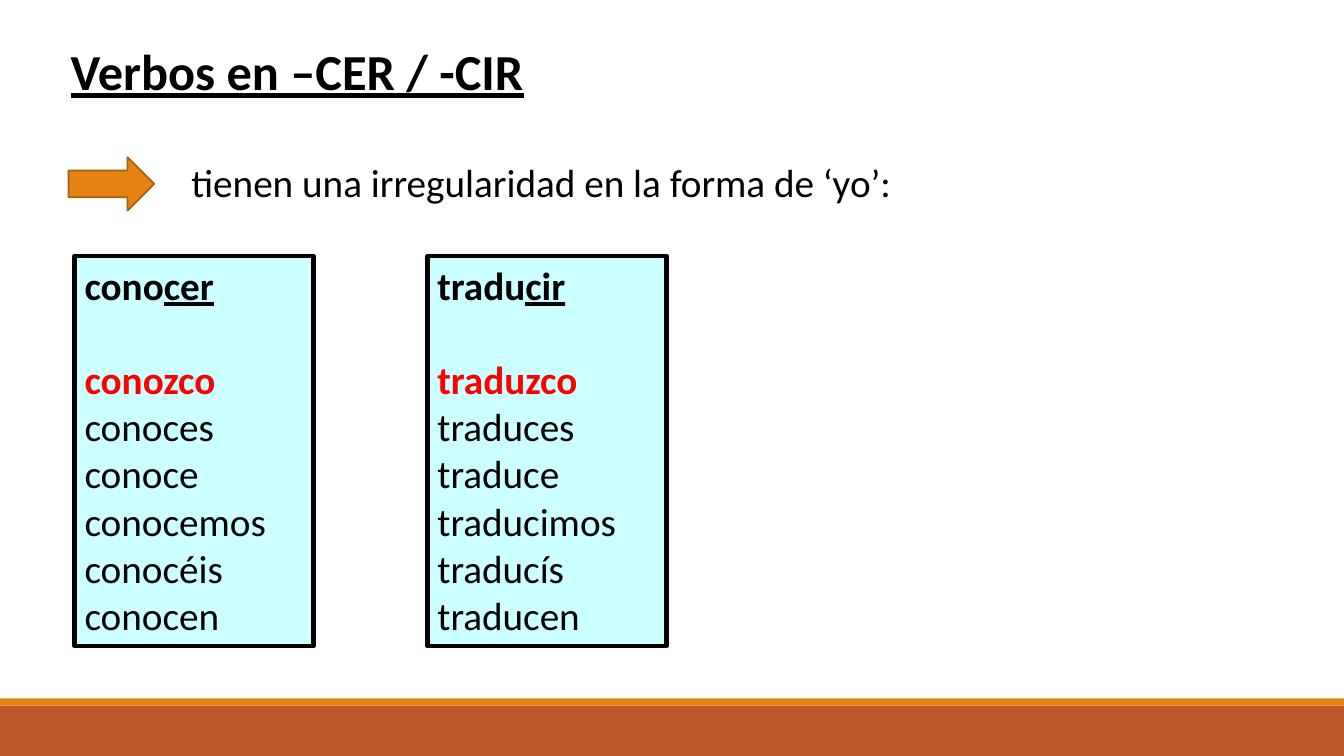
from dataclasses import dataclass

from pptx import Presentation
from pptx import util as u
from pptx.dml.color import RGBColor
from pptx.enum import shapes, text


@dataclass(frozen=True)
class Theme:
    font: str = "Calibri"
    title_size: int = 36
    body_size: int = 28
    heading_gap: int = 34
    ink: str = "000000"
    highlight: str = "FF0000"
    card: str = "CCFFFF"
    orange: str = "E48312"
    orange_edge: str = "A9610D"
    rust: str = "BD582C"


@dataclass(frozen=True)
class Area:
    left: float
    top: float
    width: float
    height: float

    def lengths(self) -> tuple:
        return tuple(u.Inches(side) for side in
                     (self.left, self.top, self.width, self.height))


@dataclass(frozen=True)
class Verb:
    stem: str
    ending: str
    irregular: str
    regular: tuple[str, ...]


THEME = Theme()
VERBS = (
    Verb("cono", "cer", "conozco",
         ("conoces", "conoce", "conocemos", "conocéis", "conocen")),
    Verb("tradu", "cir", "traduzco",
         ("traduces", "traduce", "traducimos", "traducís", "traducen")),
)
CARD_LEFT, CARD_STEP = 0.74, 3.5


def style_span(span, size: int = THEME.body_size, color: str = THEME.ink,
               bold: bool = False, underline: bool = False) -> None:
    span.font.name = THEME.font
    span.font.size = u.Pt(size)
    span.font.color.rgb = RGBColor.from_string(color)
    span.font.bold = bold
    span.font.underline = underline


def set_frame(frame) -> None:
    frame.word_wrap = True
    frame.auto_size = text.MSO_AUTO_SIZE.SHAPE_TO_FIT_TEXT
    frame.vertical_anchor = text.MSO_ANCHOR.TOP


def add_block(page, kind, area: Area, fill: str, edge: str = "", weight: float = 0):
    block = page.shapes.add_shape(kind, *area.lengths())
    block.shadow.inherit = False
    block.fill.solid()
    block.fill.fore_color.rgb = RGBColor.from_string(fill)
    if edge:
        block.line.color.rgb = RGBColor.from_string(edge)
        block.line.width = u.Pt(weight)
    else:
        block.line.fill.background()
    return block


def add_verb_card(page, verb: Verb, area: Area) -> None:
    card = add_block(page, shapes.MSO_SHAPE.RECTANGLE, area, THEME.card, THEME.ink, 3)
    frame = card.text_frame
    frame.text = "\n".join(("", verb.irregular, *verb.regular))
    set_frame(frame)
    heading, irregular, *regular = frame.paragraphs
    for para in frame.paragraphs:
        para.alignment = text.PP_ALIGN.LEFT
    # Infinitive with its ending underlined
    heading.space_after = u.Pt(THEME.heading_gap)
    for part, underline in ((verb.stem, False), (verb.ending, True)):
        span = heading.add_run()
        span.text = part
        style_span(span, bold=True, underline=underline)
    # Conjugated forms
    style_span(irregular.runs[0], color=THEME.highlight, bold=True)
    for para in regular:
        style_span(para.runs[0])


def main() -> None:
    deck = Presentation()
    deck.slide_width, deck.slide_height = u.Inches(13.33), u.Inches(7.5)
    page = deck.slides.add_slide(deck.slide_layouts[5])

    # Footer bands
    rectangle = shapes.MSO_SHAPE.RECTANGLE
    add_block(page, rectangle, Area(0, 7, 13.33, 0.5), THEME.rust)
    add_block(page, rectangle, Area(0, 6.93, 13.33, 0.07), THEME.orange)

    # Title
    title = page.shapes.title
    title.left, title.top, title.width, title.height = Area(0.6, 0.35, 4.99, 0.71).lengths()
    title.text_frame.text = "Verbos en –CER / -CIR"
    set_frame(title.text_frame)
    heading = title.text_frame.paragraphs[0]
    heading.alignment = text.PP_ALIGN.LEFT
    style_span(heading.runs[0], THEME.title_size, bold=True, underline=True)

    # Rule with its arrow
    add_block(page, shapes.MSO_SHAPE.RIGHT_ARROW, Area(0.68, 1.56, 0.85, 0.53),
              THEME.orange, THEME.orange_edge, 1.25)
    box = page.shapes.add_textbox(*Area(1.8, 1.52, 7.98, 0.58).lengths())
    box.text_frame.text = "tienen una irregularidad en la forma de ‘yo’:"
    set_frame(box.text_frame)
    style_span(box.text_frame.paragraphs[0].runs[0])

    # Verb cards
    for column, verb in enumerate(VERBS):
        add_verb_card(page, verb, Area(CARD_LEFT + column * CARD_STEP, 2.54, 2.37, 3.87))

    deck.save("out.pptx")


if __name__ == "__main__":
    main()
